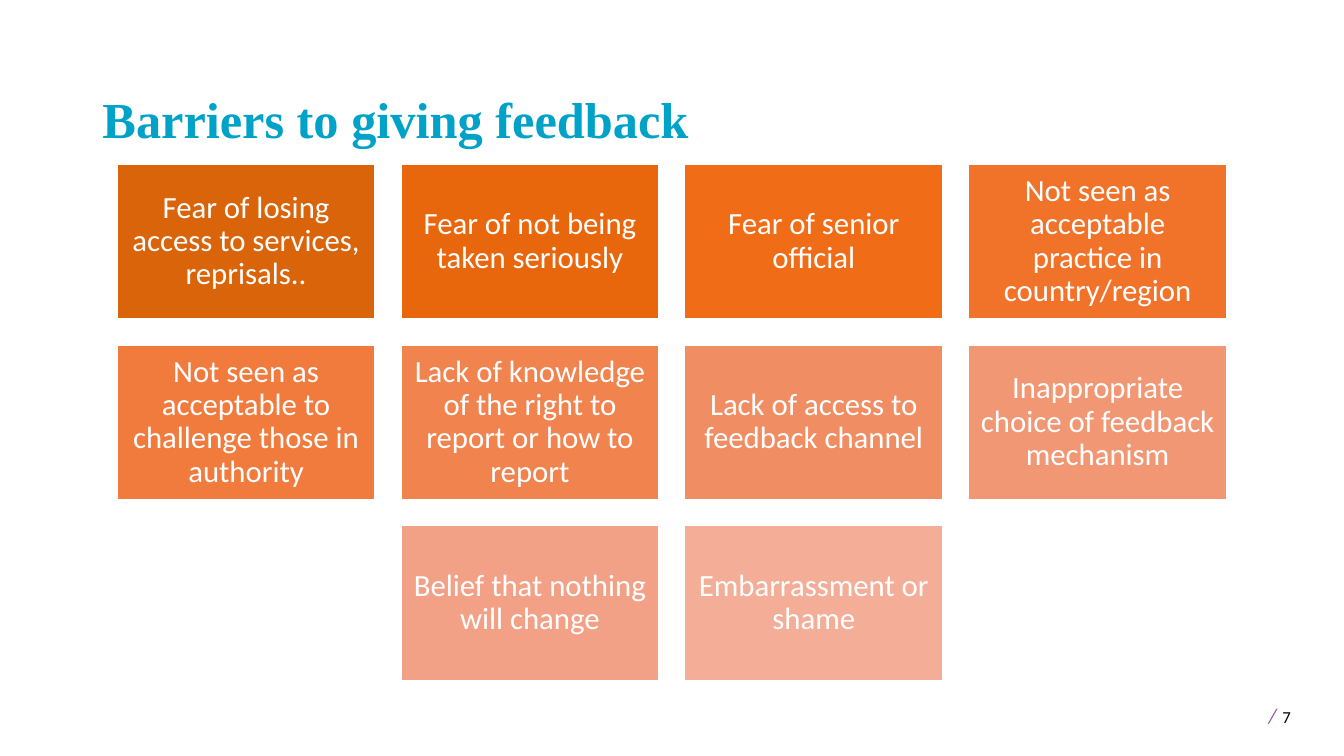
import pptx
import pptx.util
import pptx.dml.color
import pptx.enum.shapes
import pptx.enum.text

Pt = pptx.util.Pt
ALIGN = pptx.enum.text.PP_ALIGN
ANCHOR = pptx.enum.text.MSO_ANCHOR

ITEMS = [
    ("Fear of losing access to services, reprisals..", "D9640A"),
    ("Fear of not being taken seriously", "E9670C"),
    ("Fear of senior official", "F16C17"),
    ("Not seen as acceptable practice in country/region", "F1732A"),
    ("Not seen as acceptable to challenge those in authority", "F17B3D"),
    ("Lack of knowledge of the right to report or how to report", "F1834F"),
    ("Lack of access to feedback channel", "F18D62"),
    ("Inappropriate choice of feedback mechanism", "F29774"),
    ("Belief that nothing will change", "F3A186"),
    ("Embarrassment or shame", "F4AD97"),
]


def color(code):
    return pptx.dml.color.RGBColor.from_string(code)


def style(run, face, size, code):
    run.font.name = face
    run.font.size = Pt(size)
    run.font.color.rgb = color(code)


# Heading in the title placeholder
def add_title(slide, text, left, top, width, height):
    title = slide.shapes.title
    title.left, title.top = Pt(left), Pt(top)
    title.width, title.height = Pt(width), Pt(height)
    frame = title.text_frame
    frame.text = text
    frame.auto_size = pptx.enum.text.MSO_AUTO_SIZE.NONE
    frame.vertical_anchor = ANCHOR.BOTTOM
    line = frame.paragraphs[0]
    line.alignment = ALIGN.LEFT
    line.line_spacing = 0.9
    style(line.runs[0], "Times New Roman", 36, "00A2C7")
    line.runs[0].font.bold = True


# One coloured tile with centred text
def add_tile(slide, text, fill, left, top, width, height):
    tile = slide.shapes.add_shape(
        pptx.enum.shapes.MSO_SHAPE.RECTANGLE,
        Pt(left), Pt(top), Pt(width), Pt(height))
    tile.shadow.inherit = False
    tile.fill.solid()
    tile.fill.fore_color.rgb = color(fill)
    tile.line.color.rgb = color("FFFFFF")
    tile.line.width = Pt(1)
    frame = tile.text_frame
    frame.text = text
    frame.word_wrap = True
    frame.vertical_anchor = ANCHOR.MIDDLE
    frame.margin_left = frame.margin_right = Pt(6.6)
    frame.margin_top = frame.margin_bottom = Pt(6.6)
    line = frame.paragraphs[0]
    line.alignment = ALIGN.CENTER
    line.line_spacing = 0.9
    style(line.runs[0], "Calibri", 22, "FFFFFF")


# Grid of tiles: gaps are a tenth of a tile, a short last row is centred
def add_grid(slide, items, left, top, width, cols=4):
    wide = width / (cols + (cols - 1) * 0.1)
    high = wide * 0.6
    gap = wide * 0.1
    for index, (text, fill) in enumerate(items):
        row, col = divmod(index, cols)
        count = min(cols, len(items) - row * cols)
        shift = (cols - count) / 2
        add_tile(slide, text, fill,
                 left + (col + shift) * (wide + gap),
                 top + row * (high + gap), wide, high)


# Page number with a slanted stroke before it
def add_page(slide, number, left, top, width, height):
    box = slide.shapes.add_textbox(Pt(left), Pt(top), Pt(width), Pt(height))
    box.text_frame.word_wrap = True
    line = box.text_frame.paragraphs[0]
    parts = [(" ", 18, "000000"), ("/", 15, "9053A1"),
             (" ", 18, "000000"), (number, 12, "000000")]
    for text, size, code in parts:
        run = line.add_run()
        run.text = text
        style(run, "Calibri", size, code)
        run.font.italic = text == "/"


def main():
    deck = pptx.Presentation()
    deck.slide_width, deck.slide_height = Pt(960), Pt(540)
    slide = deck.slides.add_slide(deck.slide_layouts[5])
    add_page(slide, "7", 895, 495.5, 62.5, 29)
    add_grid(slide, ITEMS, 83.6, 117.3, 792.6)
    add_title(slide, "Barriers to giving feedback", 66, 28.75, 828, 81.5)
    deck.save("out.pptx")


if __name__ == "__main__":
    main()
